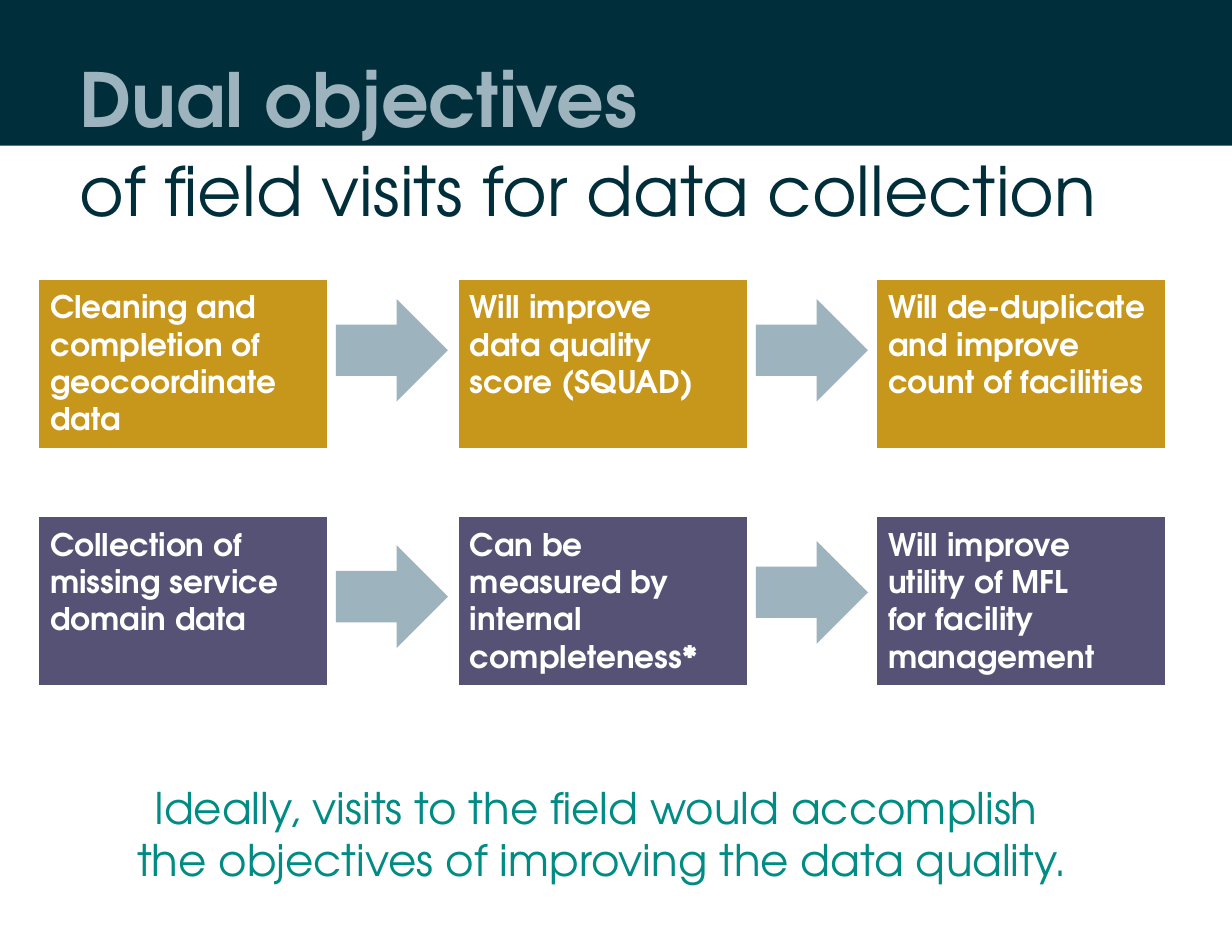
from pptx import Presentation
from pptx.dml.color import RGBColor
from pptx.enum.shapes import MSO_SHAPE as SHAPE
from pptx.enum.text import MSO_ANCHOR as ANCHOR, MSO_AUTO_SIZE as AUTO, PP_ALIGN as ALIGN
from pptx.util import Pt

FONT = "TeX Gyre Adventor"
NAVY = RGBColor(0x00, 0x2E, 0x3A)
GREY = RGBColor(0x9D, 0xB4, 0xBE)
TEAL = RGBColor(0x00, 0x8C, 0x84)
GOLD = RGBColor(0xC7, 0x97, 0x1C)
PURPLE = RGBColor(0x55, 0x52, 0x76)
WHITE = RGBColor(0xFF, 0xFF, 0xFF)


def write(s, text, size, color, bold=False, align=ALIGN.LEFT, spacing=None, top=3.6):
    tf = s.text_frame
    tf.word_wrap = True
    tf.auto_size = AUTO.NONE
    tf.vertical_anchor = ANCHOR.TOP
    tf.margin_left = tf.margin_right = Pt(7.2)
    tf.margin_top, tf.margin_bottom = Pt(top), Pt(3.6)
    p = tf.paragraphs[0]
    p.text = text
    p.alignment = align
    p.line_spacing = spacing
    for r in p.runs:
        r.font.name, r.font.size, r.font.bold = FONT, Pt(size), bold
        r.font.color.rgb = color


def add_block(kind, left, top, width, height, color):
    s = slide.shapes.add_shape(kind, Pt(left), Pt(top), Pt(width), Pt(height))
    s.shadow.inherit = False
    s.fill.solid()
    s.fill.fore_color.rgb = color
    s.line.fill.background()
    return s


prs = Presentation()
prs.slide_width, prs.slide_height = Pt(792), Pt(612)
slide = prs.slides.add_slide(prs.slide_layouts[5])

# Header band, sent behind the title
band = add_block(SHAPE.RECTANGLE, 0, 0, 792, 93.6, NAVY)
slide.shapes._spTree.insert(2, band._element)

title = slide.shapes.title
title.left, title.top, title.width, title.height = Pt(43.9), Pt(28.8), Pt(730), Pt(90)
write(title, "Dual objectives", 48, GREY, bold=True, top=5)

subtitle = slide.shapes.add_textbox(Pt(43.9), Pt(91.4), Pt(741.6), Pt(66.2))
write(subtitle, "of field visits for data collection", 44, NAVY)

closing = slide.shapes.add_textbox(Pt(25.2), Pt(498.2), Pt(723.6), Pt(66.2))
write(closing, "Ideally, visits to the field would accomplish \vthe objectives of improving the data quality.",
      28, TEAL, align=ALIGN.CENTER)

# Each row: box colour, box top, arrow tops, box texts
ROWS = [
    (GOLD, 180, (192.2, 192.2), (
        "Cleaning and completion of geocoordinate data",
        "Will improve \vdata quality score (SQUAD)",
        "Will de-duplicate and improve count of facilities")),
    (PURPLE, 332.6, (350.6, 347.8), (
        "Collection of missing service domain data",
        "Can be measured by internal completeness*",
        "Will improve utility of MFL \vfor facility management")),
]
BOX_LEFTS = (25.2, 295, 563.8)
ARROW_LEFTS = (216, 486)

for color, top, arrow_tops, texts in ROWS:
    for left, text in zip(BOX_LEFTS, texts):
        box = add_block(SHAPE.FLOWCHART_PROCESS, left, top, 185, 108, color)
        write(box, text, 20, WHITE, bold=True, spacing=Pt(24), top=5)
    for left, arrow_top in zip(ARROW_LEFTS, arrow_tops):
        add_block(SHAPE.RIGHT_ARROW, left, arrow_top, 72, 66, GREY)

prs.save("out.pptx")
